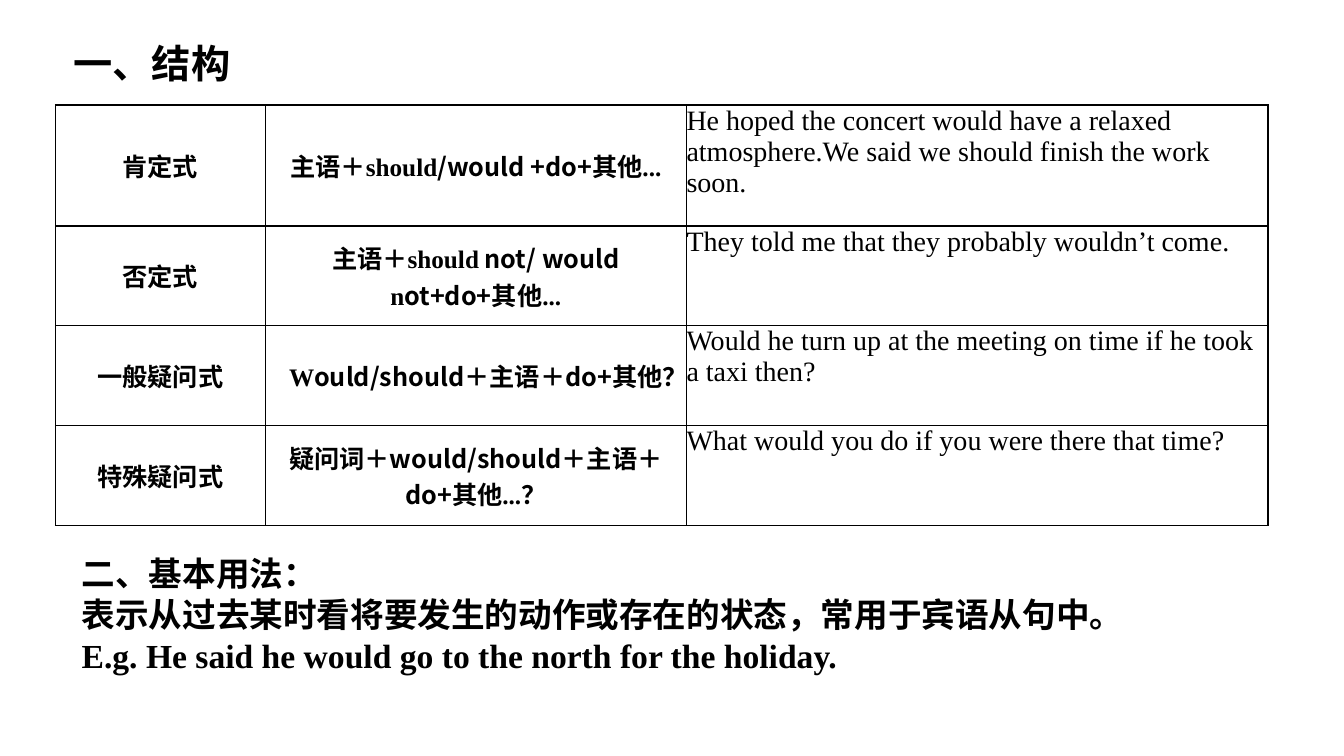
from dataclasses import dataclass

from lxml.etree import SubElement
from pptx import Presentation
from pptx.dml.color import RGBColor
from pptx.enum.text import MSO_ANCHOR, MSO_AUTO_SIZE, PP_ALIGN
from pptx.oxml.ns import qn
from pptx.util import Pt


@dataclass(frozen=True)
class Theme:
    ink: str = "000000"
    serif: str = "Times New Roman"
    sans: str = "Noto Sans CJK SC"
    heading_font: str = "Arial"
    title_size: int = 28
    body_size: int = 24
    example_size: int = 20
    form_size: int = 18
    border: int = 1
    form_margin: float = 8.64


class SlideBuilder:
    def __init__(self, presentation, theme):
        self.theme = theme
        self.slide = presentation.slides.add_slide(presentation.slide_layouts[1])

    def style(self, font, size, name, bold=True):
        font.size = Pt(size)
        font.bold = bold
        font.color.rgb = RGBColor.from_string(self.theme.ink)
        font.name = name
        # East Asian typeface follows the Latin one
        SubElement(font._element, qn("a:ea")).set("typeface", self.theme.sans)

    def placeholder(self, index, box, lines, size, anchor, line_spacing=None):
        shape = self.slide.placeholders[index]
        shape.left, shape.top, shape.width, shape.height = map(Pt, box)
        frame = shape.text_frame
        frame.word_wrap = True
        frame.auto_size = MSO_AUTO_SIZE.NONE
        frame.vertical_anchor = anchor
        frame.text = "\n".join(text for text, _ in lines)
        for paragraph, (_, name) in zip(frame.paragraphs, lines):
            paragraph.alignment = PP_ALIGN.LEFT
            paragraph.space_before = Pt(0)
            if line_spacing:
                paragraph.line_spacing = Pt(line_spacing)
            self.style(paragraph.font, size, name)
            properties = paragraph._p.get_or_add_pPr()
            properties.set("marL", "0")
            properties.set("indent", "0")
            properties.insert_element_before(
                properties.makeelement(qn("a:buNone")), "a:tabLst", "a:defRPr")

    def borders(self, cell):
        properties = cell._tc.get_or_add_tcPr()
        for side in ("a:lnL", "a:lnR", "a:lnT", "a:lnB"):
            line = SubElement(properties, qn(side), w=str(Pt(self.theme.border)))
            fill = SubElement(line, qn("a:solidFill"))
            SubElement(fill, qn("a:srgbClr"), val=self.theme.ink)

    def cell(self, cell, runs, size, margin, bold, centred):
        cell.margin_left = cell.margin_right = Pt(margin)
        cell.margin_top = cell.margin_bottom = Pt(margin)
        cell.vertical_anchor = MSO_ANCHOR.MIDDLE if centred else MSO_ANCHOR.TOP
        self.borders(cell)
        cell.fill.background()
        paragraph = cell.text_frame.paragraphs[0]
        paragraph.alignment = PP_ALIGN.CENTER if centred else PP_ALIGN.LEFT
        for text, name in runs:
            run = paragraph.add_run()
            run.text = text
            self.style(run.font, size, name, bold)

    def table(self, left, top, widths, heights, rows):
        theme = self.theme
        frame = self.slide.shapes.add_table(
            len(heights), len(widths), Pt(left), Pt(top),
            Pt(sum(widths)), Pt(sum(heights)))
        table = frame.table
        table.first_row = table.horz_banding = False
        for column, width in zip(table.columns, widths):
            column.width = Pt(width)
        for row, height in zip(table.rows, heights):
            row.height = Pt(height)
        for row, (form, pattern, example) in zip(table.rows, rows):
            form_cell, pattern_cell, example_cell = row.cells
            for cell, runs in ((form_cell, [(form, theme.serif)]),
                               (pattern_cell, pattern)):
                self.cell(cell, runs, theme.form_size, theme.form_margin, True, True)
            self.cell(example_cell, [(example, theme.serif)],
                      theme.example_size, 0, False, False)


def main():
    theme = Theme()
    serif, sans = theme.serif, theme.sans
    presentation = Presentation()
    presentation.slide_width, presentation.slide_height = Pt(960), Pt(540)
    builder = SlideBuilder(presentation, theme)

    # Heading
    builder.placeholder(0, (45.4, 24.5, 662.4, 41), [("一、结构", serif)],
                        theme.title_size, MSO_ANCHOR.MIDDLE)

    # Sentence forms: name, pattern, example
    builder.table(39.6, 75, (149.8, 301, 415.4), (86.4, 71.3, 71.3, 71.3), [
        ("肯定式",
         [("主语＋should", serif), ("/would +do+其他", sans), ("...", serif)],
         "He hoped the concert would have a relaxed atmosphere."
         "We said we should finish the work soon."),
        ("否定式",
         [("主语＋should", serif), (" not/ would ", sans), ("n", serif),
          ("ot+do+其他", sans), ("...", serif)],
         "They told me that they probably wouldn’t come."),
        ("一般疑问式",
         [("W", serif), ("ould/should", sans), ("＋主语＋", serif),
          ("do+其他？", sans)],
         "Would he turn up at the meeting on time if he took a taxi then?"),
        ("特殊疑问式",
         [("疑问词＋", serif), ("would/should", sans), ("＋主语＋", serif),
          ("do+其他", sans), ("...？", serif)],
         "What would you do if you were there that time?"),
    ])

    # Basic usage
    builder.placeholder(1, (51.1, 391, 740.9, 125), [
        ("二、基本用法：", serif),
        ("表示从过去某时看将要发生的动作或存在的状态，常用于宾语从句中。",
         theme.heading_font),
        ("E.g. He said he would go to the north for the holiday.", serif),
    ], theme.body_size, MSO_ANCHOR.TOP, 29.3)

    presentation.save("out.pptx")


if __name__ == "__main__":
    main()
